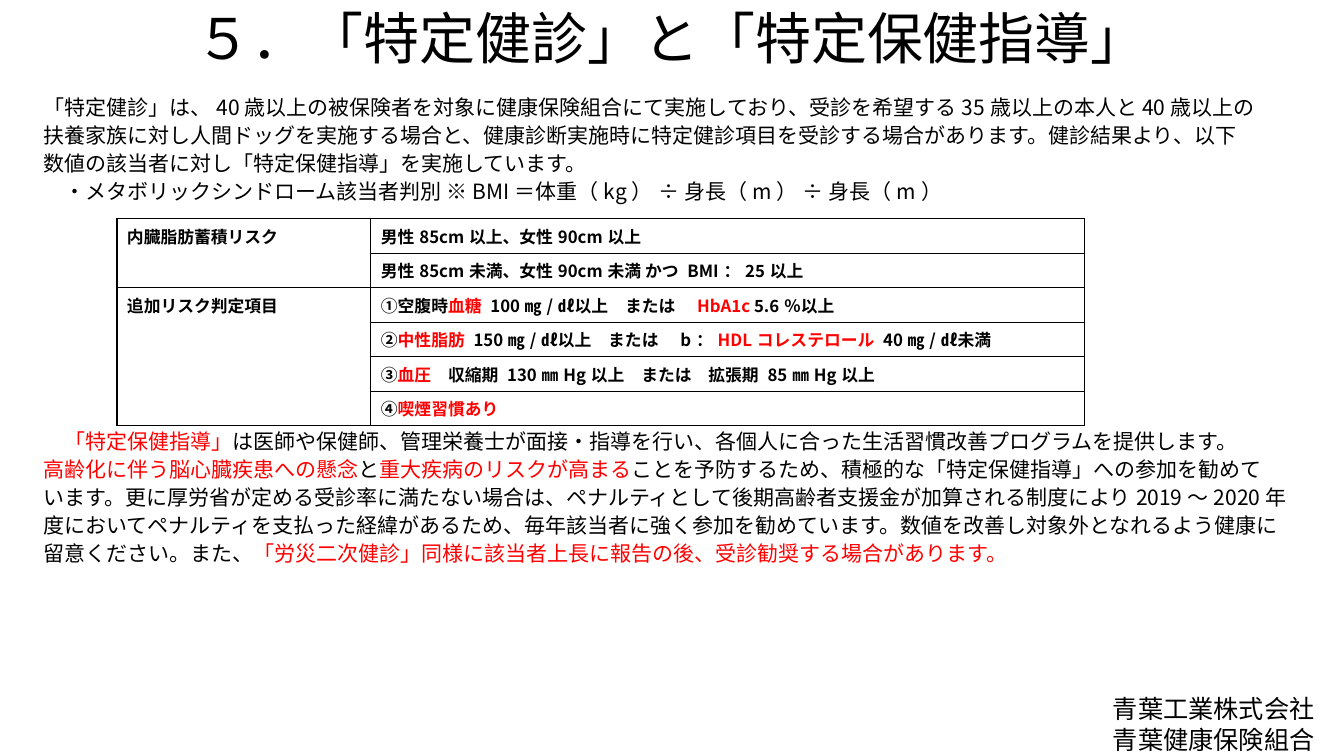
from lxml import etree
from pptx import Presentation
from pptx.dml.color import RGBColor
from pptx.enum.text import MSO_ANCHOR, MSO_AUTO_SIZE, PP_ALIGN
from pptx.oxml.ns import qn
from pptx.util import Pt

LEFT, CENTER = PP_ALIGN.LEFT, PP_ALIGN.CENTER
TOP, MIDDLE, BOTTOM = MSO_ANCHOR.TOP, MSO_ANCHOR.MIDDLE, MSO_ANCHOR.BOTTOM
NO_FIT = MSO_AUTO_SIZE.NONE
FONT = "Noto Sans CJK JP"
BLACK, RED, WHITE = "000000", "FF0000", "FFFFFF"
ROW_HEIGHT = 24.6
COLUMN_WIDTHS = (181.4, 509.8)
FORMULA_TAB = 360

TITLE = "５．「特定健診」と「特定保健指導」"
INTRODUCTION = [
    "「特定健診」は、40歳以上の被保険者を対象に健康保険組合にて実施しており、受診を希望する35歳以上の本人と40歳以上の",
    "扶養家族に対し人間ドッグを実施する場合と、健康診断実施時に特定健診項目を受診する場合があります。健診結果より、以下",
    "数値の該当者に対し「特定保健指導」を実施しています。",
    "　・メタボリックシンドローム該当者判別\t※BMI＝体重（kg）÷身長（m）÷身長（m）",
]
GUIDANCE = [
    "　*「特定保健指導」*は医師や保健師、管理栄養士が面接・指導を行い、各個人に合った生活習慣改善プログラムを提供します。",
    "*高齢化に伴う脳心臓疾患への懸念*と*重大疾病のリスクが高まる*ことを予防するため、積極的な「特定保健指導」への参加を勧めて",
    "います。更に厚労省が定める受診率に満たない場合は、ペナルティとして後期高齢者支援金が加算される制度により2019～2020年",
    "度においてペナルティを支払った経緯があるため、毎年該当者に強く参加を勧めています。数値を改善し対象外となれるよう健康に",
    "留意ください。また、*「労災二次健診」同様に該当者上長に報告の後、受診勧奨する場合があります。",
]
RISKS = {
    "内臓脂肪蓄積リスク": [
        "男性85cm以上、女性90cm以上",
        "男性85cm未満、女性90cm未満 かつ BMI：25以上",
    ],
    "追加リスク判定項目": [
        "①空腹時*血糖 *100㎎/㎗以上　または　*HbA1c *5.6％以上",
        "②*中性脂肪 *150㎎/㎗以上　または　b：*HDLコレステロール *40㎎/㎗未満",
        "③*血圧*　収縮期 130㎜Hg以上　または　拡張期 85㎜Hg以上",
        "④*喫煙習慣あり",
    ],
}
SIGNATURE = ["青葉工業株式会社", "青葉健康保険組合"]


def color(value):
    return RGBColor.from_string(value)


def apply(target, values):
    for name, value in values.items():
        setattr(target, name, value)


def write(para, text, size, bold=False, **values):
    apply(para, values)
    for index, part in enumerate(text.split("*")):
        if not part:
            continue
        span = para.add_run()
        span.text = part
        apply(span.font, {"name": FONT, "size": Pt(size), "bold": bold})
        span.font.color.rgb = color(RED if index % 2 else BLACK)
        east_asian = etree.SubElement(span.font._element, qn("a:ea"))
        east_asian.set("typeface", FONT)


def fill_box(box, place, lines, anchor, size, **values):
    apply(box, dict(zip(("left", "top", "width", "height"), map(Pt, place))))
    frame = box.text_frame
    apply(frame, {"word_wrap": True, "auto_size": NO_FIT, "vertical_anchor": anchor})
    for index, line in enumerate(lines):
        para = frame.add_paragraph() if index else frame.paragraphs[0]
        write(para, line, size, **values)
    return frame.paragraphs


def add_tab(para, position):
    tabs = etree.SubElement(para._p.get_or_add_pPr(), qn("a:tabLst"))
    etree.SubElement(tabs, qn("a:tab"), pos=str(Pt(position)), algn="l")


def format_cell(cell):
    properties = cell._tc.get_or_add_tcPr()
    for side in ("a:lnL", "a:lnR", "a:lnT", "a:lnB"):
        line = etree.SubElement(properties, qn(side), w=str(Pt(1)))
        paint = etree.SubElement(line, qn("a:solidFill"))
        etree.SubElement(paint, qn("a:srgbClr"), val=BLACK)
    cell.fill.solid()
    cell.fill.fore_color.rgb = color(WHITE)


def add_risk_table(page, left, top):
    count = sum(map(len, RISKS.values()))
    frame = page.shapes.add_table(
        count, 2, Pt(left), Pt(top), Pt(sum(COLUMN_WIDTHS)), Pt(ROW_HEIGHT * count))
    table = frame.table
    apply(table, {"first_row": False, "horz_banding": False})
    for column, width in zip(table.columns, COLUMN_WIDTHS):
        column.width = Pt(width)
    for row in table.rows:
        row.height = Pt(ROW_HEIGHT)
    for cell in table.iter_cells():
        format_cell(cell)
    start = 0
    for heading, criteria in RISKS.items():
        heading_cell = table.cell(start, 0)
        heading_cell.merge(table.cell(start + len(criteria) - 1, 0))
        write(heading_cell.text_frame.paragraphs[0], heading, 12, bold=True)
        for index, text in enumerate(criteria, start):
            write(table.cell(index, 1).text_frame.paragraphs[0], text, 12, bold=True)
        start += len(criteria)


def main():
    deck = Presentation()
    apply(deck, {"slide_width": Pt(960), "slide_height": Pt(540)})
    page = deck.slides.add_slide(deck.slide_layouts[0])
    title, body = page.placeholders
    fill_box(title, (77, 0, 805, 54.7), [TITLE], BOTTOM, 40,
             alignment=CENTER, line_spacing=0.9)
    paras = fill_box(body, (23.8, 69.1, 911.5, 418.3), INTRODUCTION + GUIDANCE, TOP, 15,
                     alignment=LEFT, line_spacing=0.7, space_before=Pt(7.4))
    add_tab(paras[len(INTRODUCTION) - 1], FORMULA_TAB)
    paras[len(INTRODUCTION)].space_before = Pt(165.9)
    add_risk_table(page, 83.5, 156.2)
    signature = page.shapes.add_textbox(0, 0, 0, 0)
    fill_box(signature, (774, 494, 186, 46), SIGNATURE, MIDDLE, 18, alignment=CENTER)
    deck.save("out.pptx")


if __name__ == "__main__":
    main()
